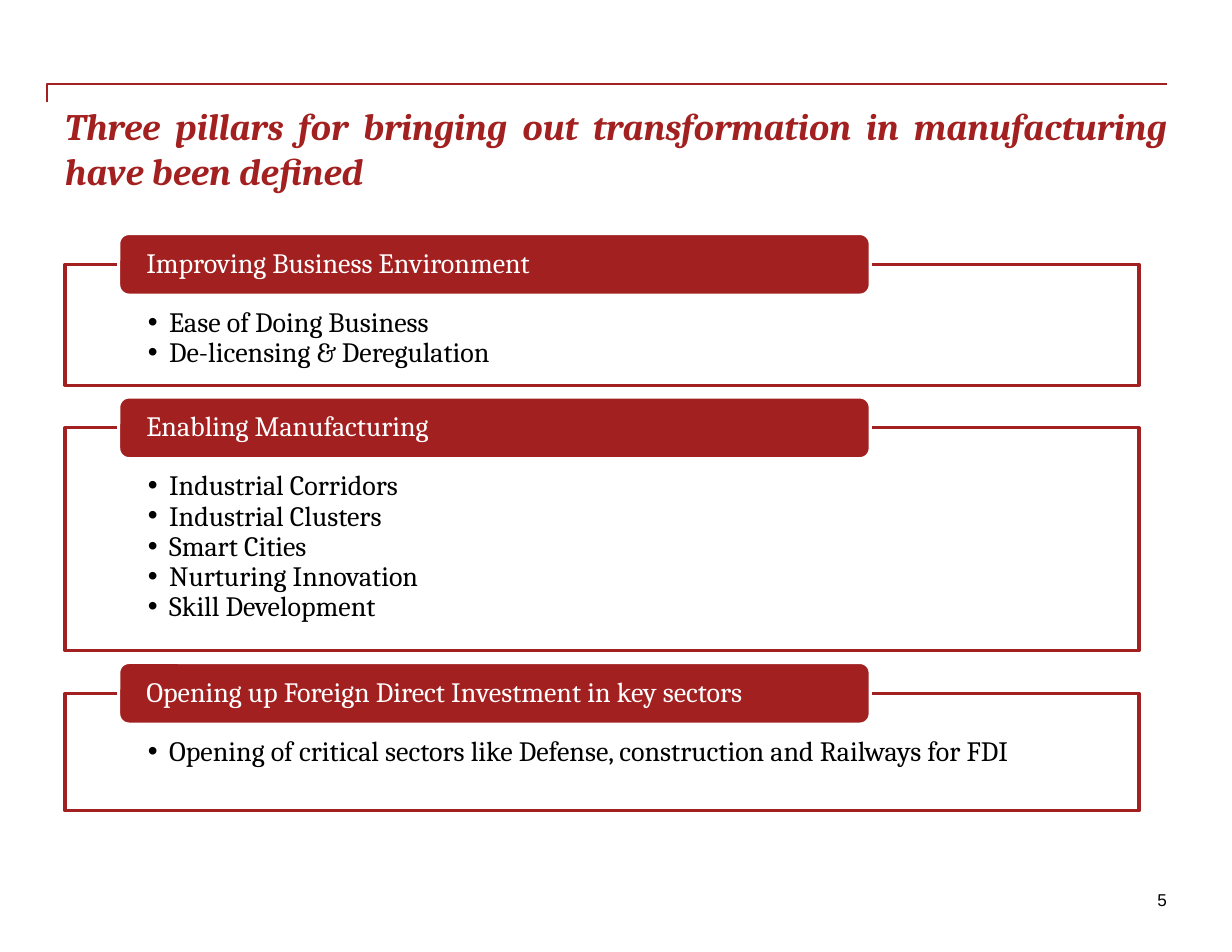
"""Build the slide on the three pillars of manufacturing transformation."""
from dataclasses import dataclass

from lxml import etree
from pptx import Presentation
from pptx.dml.color import RGBColor
from pptx.enum.shapes import MSO_CONNECTOR, MSO_SHAPE
from pptx.enum.text import MSO_ANCHOR, PP_ALIGN
from pptx.oxml.ns import qn
from pptx.util import Inches, Pt

RECT, ROUND = MSO_SHAPE.RECTANGLE, MSO_SHAPE.ROUNDED_RECTANGLE
ELBOW = MSO_CONNECTOR.ELBOW
TOP, MIDDLE = MSO_ANCHOR.TOP, MSO_ANCHOR.MIDDLE
LEFT, RIGHT, JUSTIFY = PP_ALIGN.LEFT, PP_ALIGN.RIGHT, PP_ALIGN.JUSTIFY

BOX_LEFT, BOX_WIDTH, BOX_GAP = 0.58, 9.59, 0.38
TAB_LEFT, TAB_WIDTH, TAB_HEIGHT = 1.06, 6.71, 0.55
FIRST_BOX_TOP = 2.36

PILLARS = [
    ("Improving Business Environment", 1.08,
     ["Ease of Doing Business", "De-licensing & Deregulation"]),
    ("Enabling Manufacturing", 1.99,
     ["Industrial Corridors", "Industrial Clusters", "Smart Cities",
      "Nurturing Innovation", "Skill Development"]),
    ("Opening up Foreign Direct Investment in key sectors", 1.05,
     ["Opening of critical sectors like Defense, construction and Railways for FDI"]),
]


@dataclass(frozen=True)
class Theme:
    red: RGBColor = RGBColor.from_string("A32020")
    white: RGBColor = RGBColor.from_string("FFFFFF")
    black: RGBColor = RGBColor.from_string("000000")
    serif: str = "Cambria"
    sans: str = "Arial"
    title: int = 24
    body: int = 18
    number: int = 11


def add_bullet(p, indent):
    pPr = p._p.get_or_add_pPr()
    pPr.set("marL", str(Inches(indent)))
    pPr.set("indent", str(-Inches(indent)))
    etree.SubElement(pPr, qn("a:buFont"), typeface="Arial")
    etree.SubElement(pPr, qn("a:buChar"), char="•")


def write(sp, lines, *, font, size, color, bold=False, italic=False, align=LEFT,
          anchor=TOP, insets=(0, 0, 0, 0), spacing=None, bullet=None, wrap=True):
    tf = sp.text_frame
    tf.word_wrap = wrap
    tf.vertical_anchor = anchor
    tf.margin_left, tf.margin_top, tf.margin_right, tf.margin_bottom = map(Inches, insets)
    for i, line in enumerate(lines):
        p = tf.add_paragraph() if i else tf.paragraphs[0]
        p.alignment = align
        p.line_spacing = spacing
        p.space_after = Pt(0)
        if bullet:
            add_bullet(p, bullet)
        r = p.add_run()
        r.text = line
        r.font.name, r.font.size = font, Pt(size)
        r.font.bold, r.font.italic = bold, italic
        r.font.color.rgb = color


class SlideBuilder:
    def __init__(self, s, theme):
        self.s = s
        self.theme = theme

    def text(self, x, y, w, h, line, **fmt):
        sp = self.s.shapes.add_textbox(Inches(x), Inches(y), Inches(w), Inches(h))
        write(sp, [line], **fmt)

    def shape(self, kind, x, y, w, h, fill, line):
        sp = self.s.shapes.add_shape(kind, Inches(x), Inches(y), Inches(w), Inches(h))
        sp.shadow.inherit = False
        sp.fill.solid()
        sp.fill.fore_color.rgb = fill
        sp.line.color.rgb = line
        sp.line.width = Pt(2)
        return sp

    def title_rule(self, x1, y1, x2, y2):
        c = self.s.shapes.add_connector(ELBOW, Inches(x1), Inches(y1), Inches(x2), Inches(y2))
        c.line.color.rgb = self.theme.red
        c.line.width = Pt(1)
        spPr = c._element.spPr
        etree.SubElement(spPr, qn("a:effectLst"))
        avLst = spPr.find(qn("a:prstGeom")).find(qn("a:avLst"))
        etree.SubElement(avLst, qn("a:gd"), name="adj1", fmla="val 0")

    def pillar(self, y, h, heading, items):
        t = self.theme
        box = self.shape(RECT, BOX_LEFT, y, BOX_WIDTH, h, t.white, t.red)
        white = box._element.spPr.find(qn("a:solidFill"))[0]
        etree.SubElement(white, qn("a:alpha"), val="90000")
        write(box, items, font=t.serif, size=t.body, color=t.black,
              insets=(0.74, 0.39, 0.74, 0.14), spacing=0.9, bullet=0.19)
        tab = self.shape(ROUND, TAB_LEFT, y - TAB_HEIGHT / 2, TAB_WIDTH, TAB_HEIGHT,
                         t.red, t.white)
        write(tab, [heading], font=t.serif, size=t.body, color=t.white,
              anchor=MIDDLE, insets=(0.22, 0, 0.22, 0), spacing=0.9)


def main():
    prs = Presentation()
    prs.slide_width, prs.slide_height = Inches(11), Inches(8.5)
    t = Theme()
    b = SlideBuilder(prs.slides.add_slide(prs.slide_layouts[6]), t)
    b.title_rule(0.42, 0.91, 10.42, 0.75)
    y = FIRST_BOX_TOP
    for heading, h, items in PILLARS:
        b.pillar(y, h, heading, items)
        y += h + BOX_GAP
    b.text(0.58, 0.92, 9.84, 0.75,
           "Three pillars for bringing out transformation in manufacturing have been defined",
           font=t.serif, size=t.title, color=t.red, bold=True, italic=True, align=JUSTIFY)
    b.text(10.33, 7.94, 0.09, 0.19, "5", font=t.sans, size=t.number, color=t.black,
           align=RIGHT, wrap=False)
    prs.save("out.pptx")


if __name__ == "__main__":
    main()
